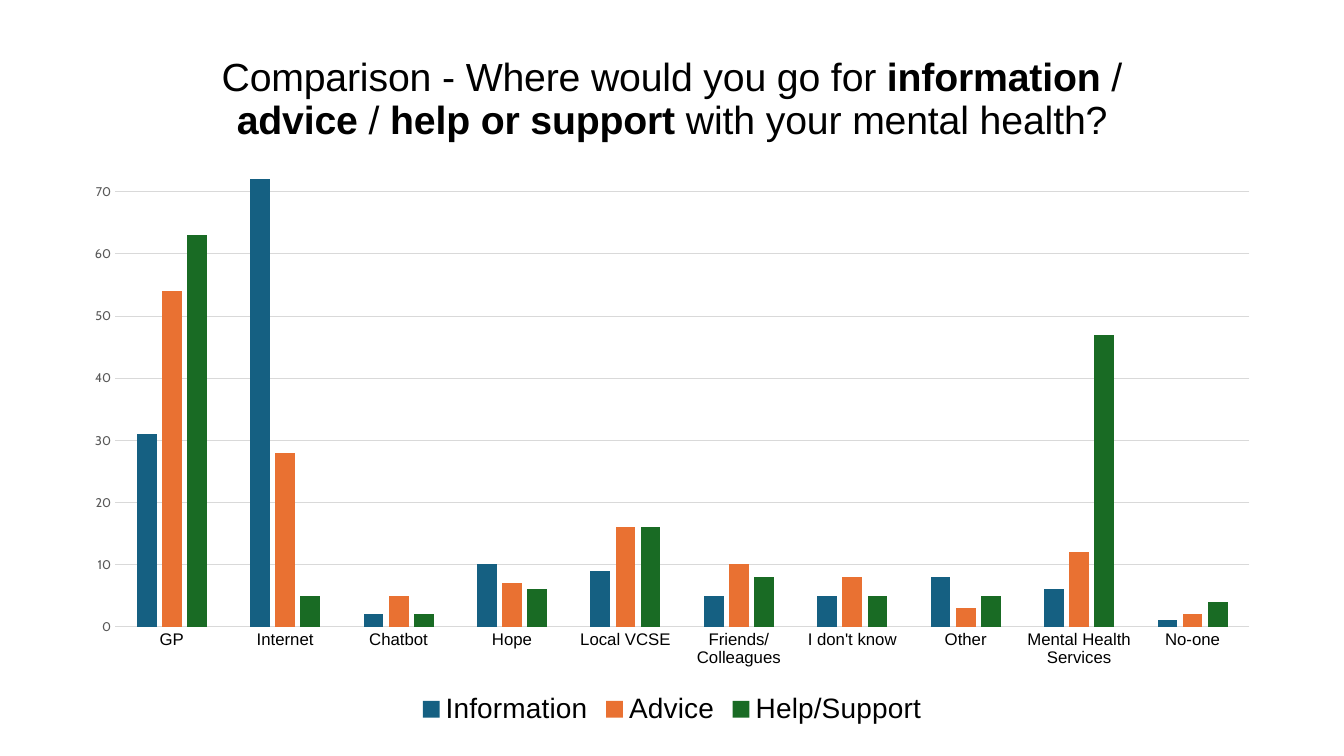
from typing import NamedTuple

from lxml.etree import SubElement
from pptx import Presentation
from pptx.chart.data import CategoryChartData
from pptx.dml.color import RGBColor
from pptx.enum.chart import XL_CHART_TYPE, XL_LEGEND_POSITION, XL_TICK_MARK
from pptx.oxml.ns import qn
from pptx.util import Inches, Pt


class Answers(NamedTuple):
    name: str
    color: str
    counts: tuple[int, ...]


class TitleRun(NamedTuple):
    text: str
    bold: bool = False


CATEGORIES = (
    "GP", "Internet", "Chatbot", "Hope", "Local VCSE", "Friends/Colleagues",
    "I don't know", "Other", "Mental Health Services", "No-one",
)
SERIES = (
    Answers("Information", "156082", (31, 72, 2, 10, 9, 5, 5, 8, 6, 1)),
    Answers("Advice", "E97132", (54, 28, 5, 7, 16, 10, 8, 3, 12, 2)),
    Answers("Help/Support", "196B24", (63, 5, 2, 6, 16, 8, 5, 5, 47, 4)),
)
TITLE = (
    TitleRun("Comparison - Where would you go for "),
    TitleRun("information", True),
    TitleRun(" / "),
    TitleRun("advice", True),
    TitleRun(" / "),
    TitleRun("help or support", True),
    TitleRun(" with your mental health?"),
)
BLACK, GREY, GRID = "000000", "595959", "D9D9D9"


def rgb(color: str) -> RGBColor:
    return RGBColor.from_string(color)


def set_font(font, name: str, size: float, color: str = BLACK) -> None:
    font.name, font.size, font.bold = name, Pt(size), False
    font.color.rgb = rgb(color)


def set_line(line, color: str) -> None:
    line.color.rgb = rgb(color)
    line.width = Pt(0.75)


def set_layout(element, position: int, inner: bool = False, **fractions: float) -> None:
    """Place a chart part by fractions of the chart frame."""
    for old_layout in element.findall(qn("c:layout")):
        element.remove(old_layout)
    layout = SubElement(element, qn("c:layout"))
    element.insert(position, layout)
    manual = SubElement(layout, qn("c:manualLayout"))
    if inner:
        SubElement(manual, qn("c:layoutTarget")).set("val", "inner")
    for side in ("x", "y"):
        SubElement(manual, qn(f"c:{side}Mode")).set("val", "edge")
    for side, fraction in fractions.items():
        SubElement(manual, qn(f"c:{side}")).set("val", str(fraction))


def add_title(chart) -> None:
    chart.has_title = True
    paragraph = chart.chart_title.text_frame.paragraphs[0]
    set_font(paragraph.font, "Arial", 28)
    for part in TITLE:
        run = paragraph.add_run()
        run.text = part.text
        set_font(run.font, "Arial", 28)
        run.font.bold = part.bold
    chart.chart_title.include_in_layout = False


def format_axes(chart) -> None:
    for axis in (chart.category_axis, chart.value_axis):
        axis.major_tick_mark = axis.minor_tick_mark = XL_TICK_MARK.NONE
    set_font(chart.category_axis.tick_labels.font, "Arial", 12)
    set_line(chart.category_axis.format.line, GRID)
    value_axis = chart.value_axis
    set_font(value_axis.tick_labels.font, "Cabin", 9, GREY)
    value_axis.minimum_scale, value_axis.maximum_scale = 0, 75
    value_axis.major_unit = 10
    value_axis.format.line.fill.background()
    set_line(value_axis.major_gridlines.format.line, GRID)


def add_comparison_chart(slide) -> None:
    data = CategoryChartData()
    data.categories = CATEGORIES
    for answers in SERIES:
        data.add_series(answers.name, answers.counts)
    chart = slide.shapes.add_chart(
        XL_CHART_TYPE.COLUMN_CLUSTERED,
        Inches(0.7), Inches(0.32), Inches(11.93), Inches(6.93), data,
    ).chart
    set_font(chart.font, "Cabin", 10)
    add_title(chart)
    format_axes(chart)

    plot = chart.plots[0]
    plot.gap_width, plot.overlap, plot.vary_by_categories = 219, -27, False
    for series, answers in zip(plot.series, SERIES):
        series.format.fill.solid()
        series.format.fill.fore_color.rgb = rgb(answers.color)
        series.invert_if_negative = False

    chart.has_legend = True
    chart.legend.position = XL_LEGEND_POSITION.BOTTOM
    chart.legend.include_in_layout = False
    set_font(chart.legend.font, "Arial", 20)

    plot_area = chart.element.find(f".//{qn('c:plotArea')}")
    set_layout(plot_area, 0, True, x=0.037, y=0.184, w=0.943, h=0.667)


def main() -> None:
    presentation = Presentation()
    presentation.slide_width = Inches(13.33)
    presentation.slide_height = Inches(7.5)
    slide = presentation.slides.add_slide(presentation.slide_layouts[6])
    add_comparison_chart(slide)
    presentation.save("out.pptx")


if __name__ == "__main__":
    main()
